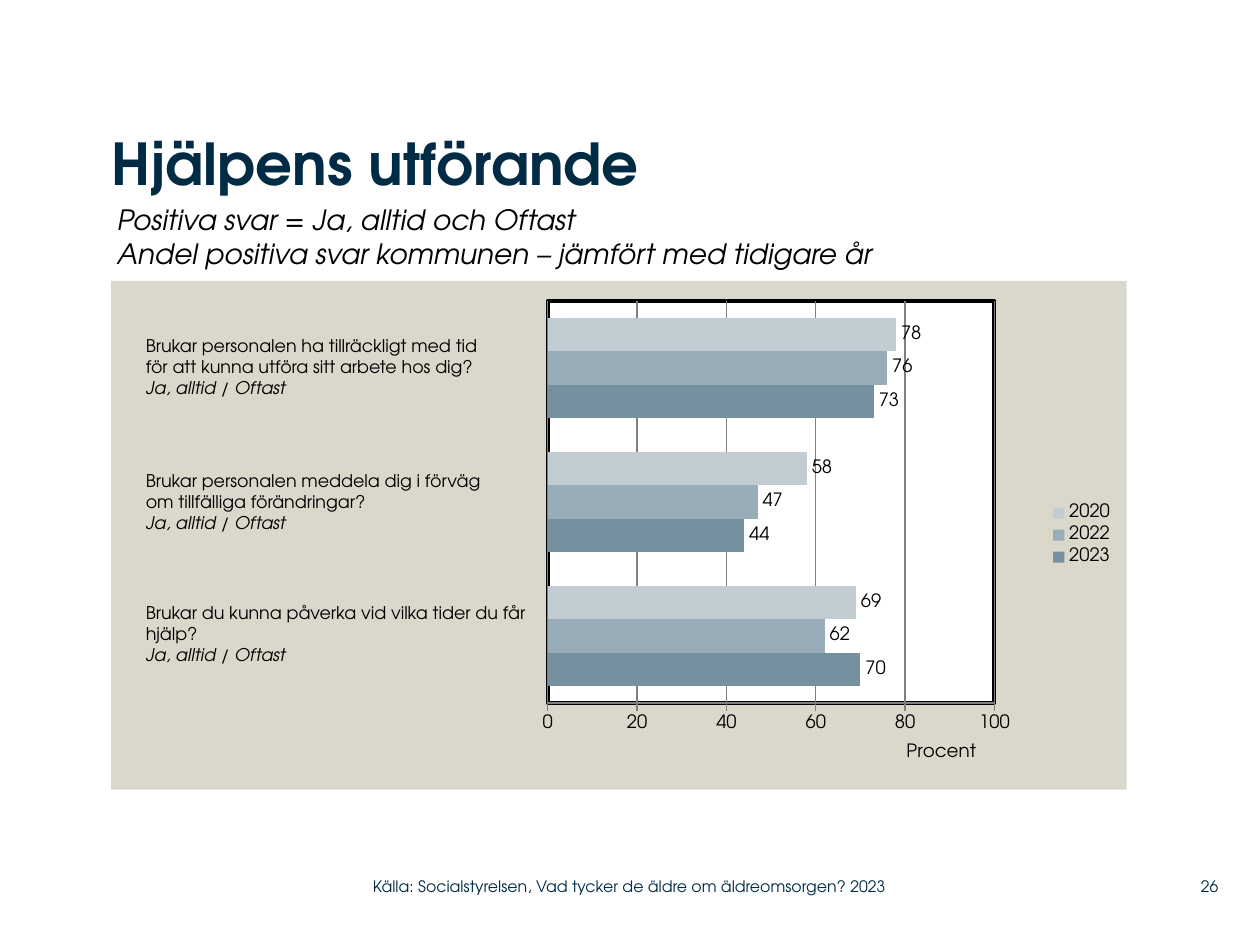
from lxml.etree import fromstring
from pptx import Presentation
from pptx.chart.data import CategoryChartData
from pptx.dml.color import RGBColor
from pptx.enum.chart import XL_CHART_TYPE, XL_LABEL_POSITION, XL_LEGEND_POSITION, XL_TICK_MARK
from pptx.enum.text import MSO_ANCHOR, PP_ALIGN
from pptx.util import Cm, Pt

FONT = "TeX Gyre Adventor"
NAVY, BLACK, GREY = "002B45", "000000", "808080"
SAND, WHITE = "DAD7CB", "FFFFFF"
C_NS = 'xmlns:c="http://schemas.openxmlformats.org/drawingml/2006/chart"'
A_NS = 'xmlns:a="http://schemas.openxmlformats.org/drawingml/2006/main"'

QUESTIONS = [
    (6.63, "Brukar personalen ha tillräckligt med tid\vför att kunna utföra sitt arbete hos dig?"),
    (9.35, "Brukar personalen meddela dig i förväg\vom tillfälliga förändringar?"),
    (12.01, "Brukar du kunna påverka vid vilka tider du får hjälp?"),
]
SERIES = [
    ("2023", (70, 44, 73), "75909F"),
    ("2022", (62, 47, 76), "99ADB9"),
    ("2020", (69, 58, 78), "C2CDD3"),
]


def rgb(color):
    return RGBColor.from_string(color)


def set_layout(parent, index, **values):
    """Give a chart part a manual layout, as fractions of the chart."""
    for old in parent.findall("{*}layout"):
        parent.remove(old)
    target = '<c:layoutTarget val="inner"/>' if "w" in values else ""
    modes = "".join(f'<c:{k}Mode val="edge"/>' for k in ("x", "y"))
    sizes = "".join(f'<c:{k} val="{v}"/>' for k, v in values.items())
    parent.insert(index, fromstring(
        f"<c:layout {C_NS}><c:manualLayout>{target}{modes}{sizes}</c:manualLayout></c:layout>"))


def area_format(fill, line=None, width=0):
    """Return the spPr element of a chart or plot area."""
    solid = '<a:solidFill><a:srgbClr val="{}"/></a:solidFill>'
    stroke = solid.format(line) if line else "<a:noFill/>"
    return fromstring(f'<c:spPr {C_NS} {A_NS}>{solid.format(fill)}'
                      f'<a:ln w="{Pt(width)}">{stroke}</a:ln></c:spPr>')


class SlideBuilder:
    def __init__(self, prs):
        self.s = prs.slides.add_slide(prs.slide_layouts[5])

    def style(self, font, size, color=BLACK, bold=False, italic=False):
        font.name, font.size = FONT, Pt(size)
        font.bold, font.italic = bold, italic
        font.color.rgb = rgb(color)

    def frame(self, sp, inset=(0, 0), anchor=MSO_ANCHOR.TOP):
        tf = sp.text_frame
        tf.word_wrap = True
        tf.vertical_anchor = anchor
        tf.margin_left = tf.margin_right = Cm(inset[0])
        tf.margin_top = tf.margin_bottom = Cm(inset[1])
        return tf

    def title(self, text, x, y, w, h):
        sp = self.s.shapes.title
        sp.left, sp.top, sp.width, sp.height = Cm(x), Cm(y), Cm(w), Cm(h)
        tf = self.frame(sp)
        tf.text = text
        p = tf.paragraphs[0]
        p.alignment = PP_ALIGN.LEFT
        for r in p.runs:
            self.style(r.font, 33, NAVY, bold=True)

    def text(self, text, x, y, w, h, size, color=BLACK, italic=False,
             align=PP_ALIGN.LEFT, **frame):
        sp = self.s.shapes.add_textbox(Cm(x), Cm(y), Cm(w), Cm(h))
        tf = self.frame(sp, **frame)
        tf.text = text
        for p in tf.paragraphs:
            p.alignment = align
            for r in p.runs:
                self.style(r.font, size, color, italic=italic)
        return tf

    def question(self, text, y):
        tf = self.text(f"{text}\nJa, alltid / Oftast", 2.69, y, 8.4, 1.55, 10,
                       inset=(0.25, 0.13))
        tf.paragraphs[-1].runs[0].font.italic = True

    def bar_chart(self, x, y, w, h):
        data = CategoryChartData(number_format="0")
        data.categories = ["1", "2", "3"]
        for name, values, _ in SERIES:
            data.add_series(name, values)
        chart = self.s.shapes.add_chart(XL_CHART_TYPE.BAR_CLUSTERED, Cm(x), Cm(y),
                                        Cm(w), Cm(h), data).chart
        self.style(chart.font, 10)
        chart.has_title = False
        chart.has_legend = True
        chart.legend.position = XL_LEGEND_POSITION.RIGHT
        chart.legend.include_in_layout = False
        self.style(chart.legend.font, 10.5)

        plot = chart.plots[0]
        plot.gap_width, plot.overlap = 100, 0
        plot.vary_by_categories = False
        for series, (_, _, color) in zip(plot.series, SERIES):
            series.format.fill.solid()
            series.format.fill.fore_color.rgb = rgb(color)
            labels = series.data_labels
            labels.show_value = True
            labels.position = XL_LABEL_POSITION.OUTSIDE_END
            self.style(labels.font, 10.5)

        chart.category_axis.visible = False
        self.percent_axis(chart.value_axis)

        root = chart._chartSpace
        plot_area = root.find(".//{*}plotArea")
        set_layout(plot_area, 0, x=0.43, y=0.04, w=0.44, h=0.79)
        plot_area.append(area_format(WHITE, BLACK, 2.25))
        root.find("{*}chart").addnext(area_format(SAND))

    def percent_axis(self, axis):
        axis.minimum_scale, axis.maximum_scale, axis.major_unit = 0, 100, 20
        axis.major_tick_mark = XL_TICK_MARK.OUTSIDE
        axis.minor_tick_mark = XL_TICK_MARK.NONE
        axis.has_major_gridlines = True
        for line in (axis.format.line, axis.major_gridlines.format.line):
            line.color.rgb = rgb(GREY)
            line.width = Pt(0.75)
        self.style(axis.tick_labels.font, 10.5)
        axis.has_title = True
        tf = axis.axis_title.text_frame
        tf.text = "Procent"
        self.style(tf.paragraphs[0].runs[0].font, 10.5)
        set_layout(axis.axis_title._element, 1, x=0.78, y=0.9)


def main():
    prs = Presentation()
    prs.slide_width, prs.slide_height = Cm(25.4), Cm(19.05)
    slide = SlideBuilder(prs)
    slide.title("Hjälpens utförande", 2.24, 2.57, 21.23, 1.55)
    slide.text("Positiva svar = Ja, alltid och Oftast\v"
               "Andel positiva svar kommunen – jämfört med tidigare år",
               2.36, 4.09, 16.61, 1.55, 16, italic=True)
    slide.bar_chart(2.24, 5.66, 20.47, 10.26)
    for y, text in QUESTIONS:
        slide.question(text, y)
    slide.text("Källa: Socialstyrelsen, Vad tycker de äldre om äldreomsorgen? 2023",
               7.52, 17.5, 11.25, 0.74, 9, NAVY, anchor=MSO_ANCHOR.MIDDLE)
    slide.text("26", 23.37, 17.5, 1.19, 0.74, 9, NAVY,
               align=PP_ALIGN.RIGHT, anchor=MSO_ANCHOR.MIDDLE)
    prs.save("out.pptx")


if __name__ == "__main__":
    main()
